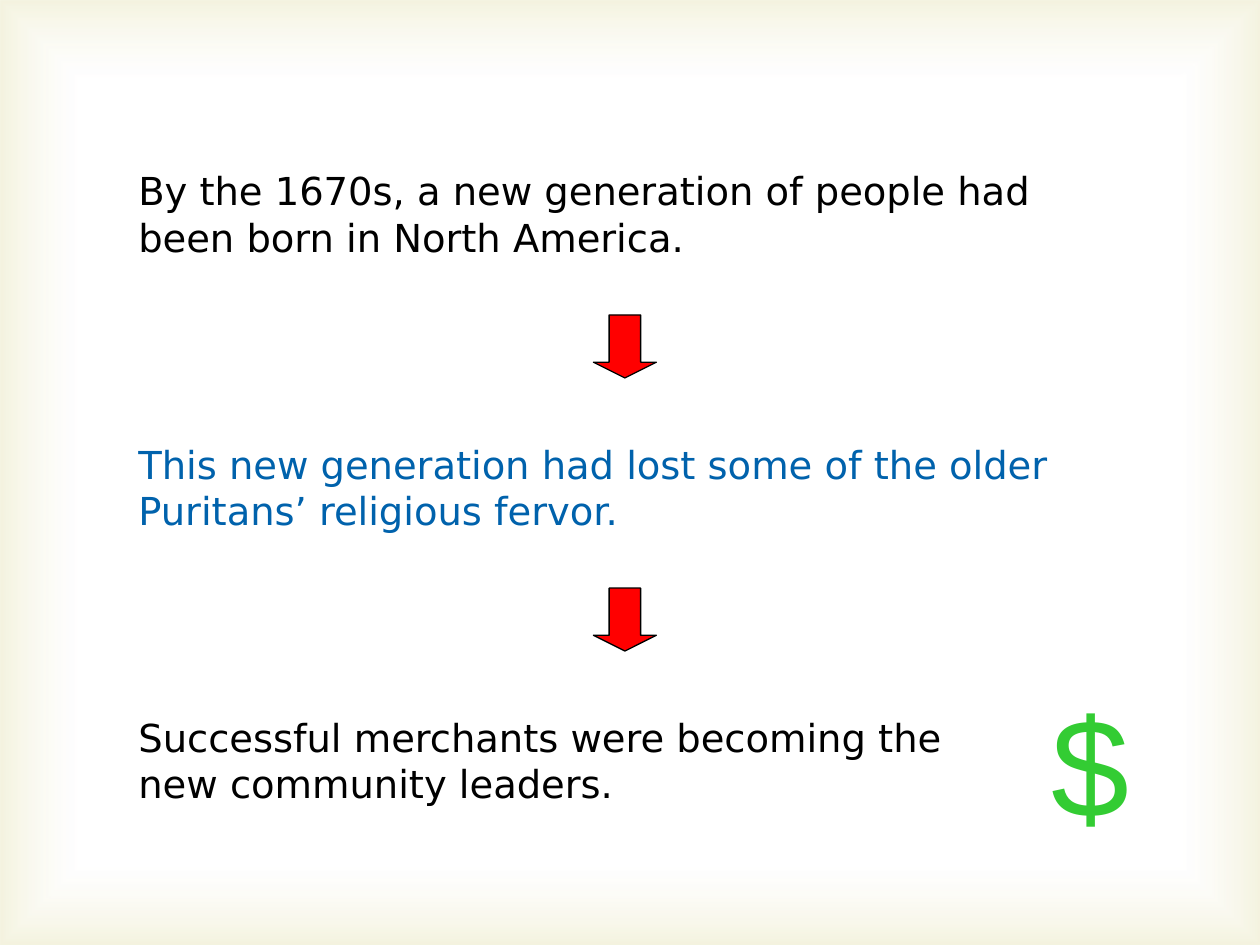
from dataclasses import dataclass

from lxml.etree import SubElement
from pptx import Presentation
from pptx.dml.color import RGBColor as Color
from pptx.enum.shapes import MSO_SHAPE as Shape
from pptx.oxml.ns import qn
from pptx.util import Inches, Pt


@dataclass(frozen=True)
class Theme:
    ink: str = "000000"
    accent: str = "0062AC"
    arrow: str = "FF0000"
    money: str = "33CC33"
    glow: tuple = ((83, "FFFFFF", 11), (100, "D1CA75", 23))
    body_font: str = "DejaVu Sans"
    symbol_font: str = "Arial"
    body_size: int = 22
    symbol_size: int = 80


THEME = Theme()
WIDTH, HEIGHT = 10, 7.5
STEPS = [
    ("By the 1670s, a new generation of people had been born in North America.", THEME.ink, 8),
    ("This new generation had lost some of the older Puritans’ religious fervor.", THEME.accent, 8),
    ("Successful merchants were becoming the new community leaders.", THEME.ink, 7.08),
]
LEFT, TOP, STEP_HEIGHT = WIDTH * 0.1, 1.28, 0.83
PITCH = HEIGHT * 0.289
ARROW_LEFT, ARROW_TOP, ARROW_SIZE = 4.71, 2.5, 0.5


def add_text(page, text, place, font, size, color):
    box = page.shapes.add_textbox(*map(Inches, place))
    frame = box.text_frame
    frame.word_wrap = True
    frame.text = text
    span = frame.paragraphs[0].runs[0]
    span.font.name = font
    span.font.size = Pt(size)
    span.font.color.rgb = Color.from_string(color)


def add_shape(page, kind, place):
    shape = page.shapes.add_shape(kind, *map(Inches, place))
    shape.shadow.inherit = False
    return shape


def add_glow(page):
    panel = add_shape(page, Shape.RECTANGLE, (0, 0, WIDTH, HEIGHT))
    panel.line.fill.background()
    panel.fill.background()
    blank = panel._element.spPr.find(qn("a:noFill"))
    gradient = blank.makeelement(qn("a:gradFill"), {"rotWithShape": "1"})
    blank.getparent().replace(blank, gradient)
    stops = SubElement(gradient, qn("a:gsLst"))
    for position, color, opacity in THEME.glow:
        stop = SubElement(stops, qn("a:gs"), pos=str(position * 1000))
        tint = SubElement(stop, qn("a:srgbClr"), val=color)
        SubElement(tint, qn("a:alpha"), val=str(opacity * 1000))
    shade = SubElement(gradient, qn("a:path"), {"path": "rect"})
    SubElement(shade, qn("a:fillToRect"), {side: "50000" for side in "ltrb"})


def add_arrow(page, top):
    arrow = add_shape(page, Shape.DOWN_ARROW, (ARROW_LEFT, top, ARROW_SIZE, ARROW_SIZE))
    arrow.adjustments[0] = 0.5
    arrow.adjustments[1] = 0.25
    arrow.fill.solid()
    arrow.fill.fore_color.rgb = Color.from_string(THEME.arrow)
    arrow.line.color.rgb = Color.from_string(THEME.ink)
    arrow.line.width = Pt(0.75)


def main():
    deck = Presentation()
    deck.slide_width, deck.slide_height = Inches(WIDTH), Inches(HEIGHT)
    page = deck.slides.add_slide(deck.slide_layouts[6])
    add_glow(page)
    for row, (text, color, width) in enumerate(STEPS):
        place = (LEFT, TOP + row * PITCH, width, STEP_HEIGHT)
        add_text(page, text, place, THEME.body_font, THEME.body_size, color)
    for row in range(len(STEPS) - 1):
        add_arrow(page, ARROW_TOP + row * PITCH)
    add_text(page, "$", (8.25, 5.33, 1.08, 1.43), THEME.symbol_font, THEME.symbol_size, THEME.money)
    deck.save("out.pptx")


if __name__ == "__main__":
    main()
